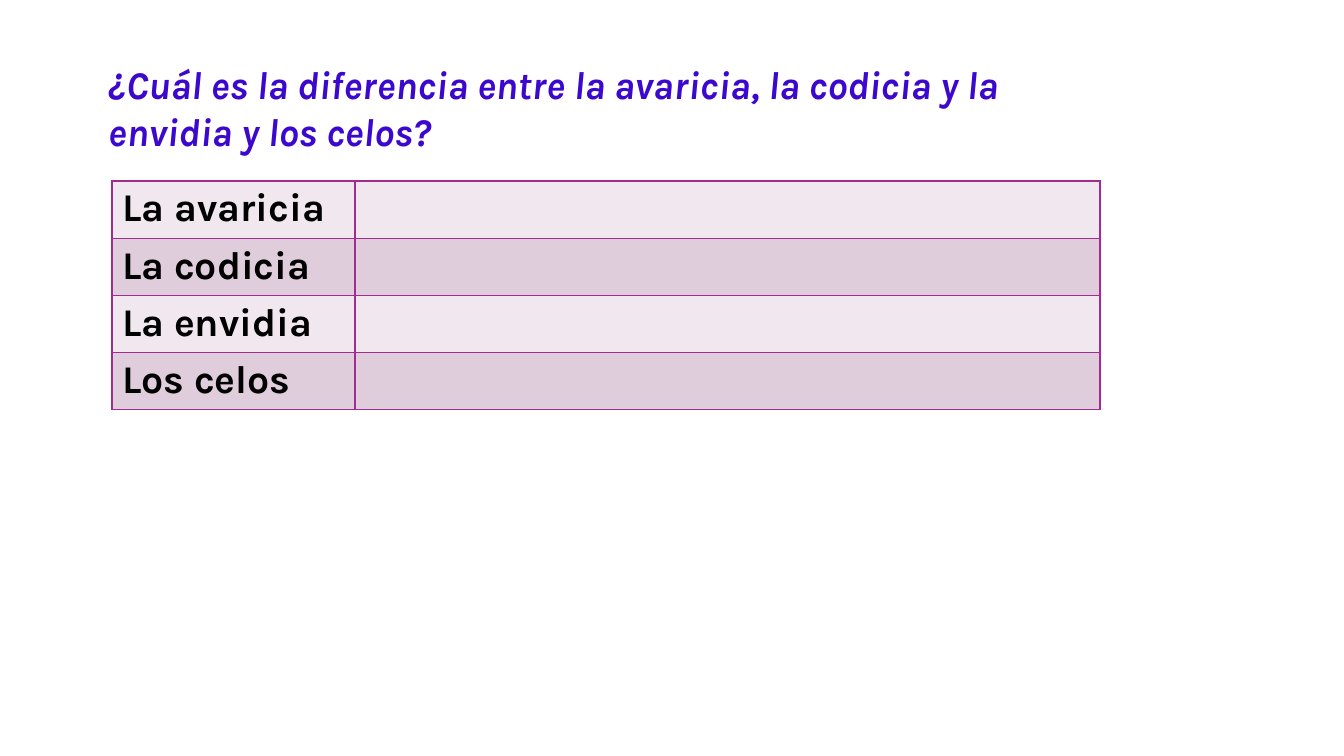
"""Build a slide asking how greed, covetousness, envy and jealousy differ."""
import lxml.etree
import pptx
import pptx.dml.color
import pptx.oxml.ns
import pptx.util

PX = 914400 / 100.8
FONT = "Karla"
WHITE = pptx.dml.color.RGBColor(0xFF, 0xFF, 0xFF)
BLACK = pptx.dml.color.RGBColor(0x00, 0x00, 0x00)
VIOLET = pptx.dml.color.RGBColor(0x3C, 0x08, 0xCE)
PURPLE = pptx.dml.color.RGBColor(0xA0, 0x2B, 0x93)
BANDS = (
    pptx.dml.color.RGBColor(0xF0, 0xE8, 0xEE),
    pptx.dml.color.RGBColor(0xDF, 0xCD, 0xDC),
)
QUESTION = "¿Cuál es la diferencia entre la avaricia, la codicia y la envidia y los celos?"
VICES = ("La avaricia", "La codicia", "La envidia", "Los celos")
COLUMN_WIDTHS = (243, 745)
ROW_HEIGHT = 57


def px(length):
    """Turn pixels into EMU."""
    return pptx.util.Emu(round(length * PX))


def style_text(paragraph, color, italic=False):
    """Set the bold font shared by the question and the vices."""
    font = paragraph.font
    font.name = FONT
    font.size = pptx.util.Pt(28)
    font.bold = True
    font.italic = italic
    font.color.rgb = color


def add_question(slide, left, top, width, height):
    """Add the wrapped question above the table."""
    question = slide.shapes.add_textbox(px(left), px(top), px(width), px(height))
    question.text_frame.word_wrap = True
    question.text_frame.text = QUESTION
    style_text(question.text_frame.paragraphs[0], VIOLET, italic=True)


def add_borders(cell):
    """Draw a one-point line on all four sides of a cell."""
    qn = pptx.oxml.ns.qn
    properties = cell._tc.get_or_add_tcPr()
    for position, side in enumerate(("a:lnL", "a:lnR", "a:lnT", "a:lnB")):
        line = lxml.etree.Element(qn(side), w=str(pptx.util.Pt(1)))
        fill = lxml.etree.SubElement(line, qn("a:solidFill"))
        lxml.etree.SubElement(fill, qn("a:srgbClr"), val=str(PURPLE))
        properties.insert(position, line)


def add_vices_table(slide, left, top):
    """Add one banded row per vice with an empty cell for its definition."""
    table = slide.shapes.add_table(
        len(VICES), len(COLUMN_WIDTHS), px(left), px(top),
        px(sum(COLUMN_WIDTHS)), px(ROW_HEIGHT * len(VICES)),
    ).table
    table.first_row = False
    table.horz_banding = False
    for column, width in zip(table.columns, COLUMN_WIDTHS):
        column.width = px(width)
    for index, (row, vice) in enumerate(zip(table.rows, VICES)):
        row.height = px(ROW_HEIGHT)
        for cell in row.cells:
            cell.fill.solid()
            cell.fill.fore_color.rgb = BANDS[index % len(BANDS)]
            add_borders(cell)
        name = row.cells[0]
        name.text = vice
        style_text(name.text_frame.paragraphs[0], BLACK)


def main():
    """Create the slide and save it."""
    presentation = pptx.Presentation()
    presentation.slide_width = px(1344)
    presentation.slide_height = px(756)
    slide = presentation.slides.add_slide(presentation.slide_layouts[6])
    slide.background.fill.solid()
    slide.background.fill.fore_color.rgb = WHITE
    add_question(slide, 98, 55, 910, 201)
    add_vices_table(slide, 112, 181)
    presentation.save("out.pptx")


if __name__ == "__main__":
    main()
